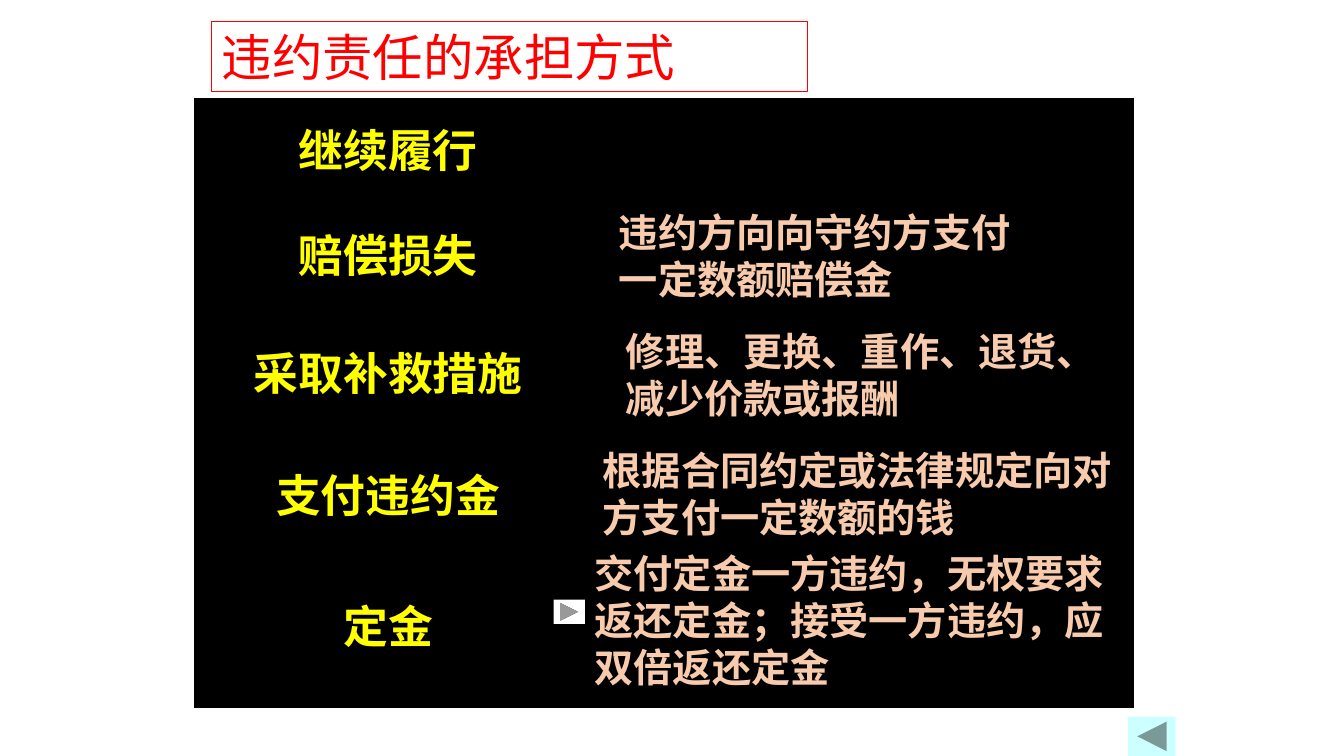
from lxml.etree import SubElement
from pptx import Presentation
from pptx.dml.color import RGBColor
from pptx.enum.shapes import MSO_SHAPE
from pptx.enum.text import MSO_ANCHOR, MSO_AUTO_SIZE, PP_ALIGN
from pptx.oxml import parse_xml
from pptx.oxml.ns import nsdecls, qn
from pptx.util import Inches, Pt


def color(code):
    return RGBColor.from_string(code)


def line_xml(tag, code, points):
    return parse_xml(
        f'<a:{tag} {nsdecls("a")} w="{int(Pt(points))}"><a:solidFill>'
        f'<a:srgbClr val="{code}"/></a:solidFill></a:{tag}>')


def write(frame, text, size, code, font, bold=False, align=None, before=20, outline=None):
    """Fill a text frame with one formatted paragraph; before is a percentage."""
    para = frame.paragraphs[0]
    para.alignment = align or PP_ALIGN.LEFT
    spacing = SubElement(para._p.get_or_add_pPr(), qn("a:spcBef"))
    SubElement(spacing, qn("a:spcPct")).set("val", str(before * 1000))
    span = para.add_run()
    span.text = text
    span.font.size = Pt(size)
    span.font.bold = bold
    span.font.name = font
    span.font.color.rgb = color(code)
    properties = span._r.get_or_add_rPr()
    SubElement(properties, qn("a:ea")).set("typeface", font)
    if outline:
        properties.insert(0, line_xml("ln", *outline))


class SlideBuilder:
    heading_font = "Noto Sans CJK SC"
    body_font = "Karla"
    red, yellow, peach, orange, black = "FF0000", "FFFF00", "F8CBAD", "ED7D31", "000000"

    def __init__(self, deck):
        self.page = deck.slides.add_slide(deck.slide_layouts[6])

    def shape(self, kind, left, top, width, height, fill=None, line=None):
        shape = self.page.shapes.add_shape(
            kind, Inches(left), Inches(top), Inches(width), Inches(height))
        shape.shadow.inherit = False
        if fill:
            shape.fill.solid()
            shape.fill.fore_color.rgb = color(fill)
        else:
            shape.fill.background()
        if line:
            shape.line.color.rgb = color(line)
            shape.line.width = Pt(0.75)
        else:
            shape.line.fill.background()
        return shape

    def title(self, text, *place):
        box = self.shape(MSO_SHAPE.RECTANGLE, *place, line=self.red)
        frame = box.text_frame
        frame.word_wrap = True
        frame.auto_size = MSO_AUTO_SIZE.SHAPE_TO_FIT_TEXT
        frame.vertical_anchor = MSO_ANCHOR.TOP
        write(frame, text, 36, self.red, self.heading_font, before=50)

    def note(self, text, left, top, width, height):
        box = self.page.shapes.add_textbox(
            Inches(left), Inches(top), Inches(width), Inches(height))
        frame = box.text_frame
        frame.word_wrap = True
        frame.auto_size = MSO_AUTO_SIZE.SHAPE_TO_FIT_TEXT
        write(frame, text, 28, self.peach, self.body_font, bold=True,
              outline=(self.orange, 1.75))

    def table(self, labels, left, top, widths, heights):
        table = self.page.shapes.add_table(
            len(heights), len(widths), Inches(left), Inches(top),
            Inches(sum(widths)), Inches(sum(heights))).table
        for column, width in zip(table.columns, widths):
            column.width = Inches(width)
        last_row, last_column = len(heights) - 1, len(widths) - 1
        for i, height in enumerate(heights):
            table.rows[i].height = Inches(height)
            for j in range(len(widths)):
                cell = table.cell(i, j)
                cell.vertical_anchor = MSO_ANCHOR.MIDDLE
                # Thick border on the outer edges, thin inside
                outer = {"lnL": j == 0, "lnR": j == last_column,
                         "lnT": i == 0, "lnB": i == last_row}
                for tag, thick in outer.items():
                    cell._tc.get_or_add_tcPr().append(
                        line_xml(tag, self.black, 2.25 if thick else 1))
                cell.fill.solid()
                cell.fill.fore_color.rgb = color(self.black)
            write(table.cell(i, 0).text_frame, labels[i], 32, self.yellow,
                  self.body_font, bold=True, align=PP_ALIGN.CENTER)


def main():
    deck = Presentation()
    deck.slide_width, deck.slide_height = Inches(13.33), Inches(7.5)
    builder = SlideBuilder(deck)

    # Remedies table
    builder.table(["继续履行", "赔偿损失", "采取补救措施", "支付违约金", "定金"],
                  1.94, 0.99, [3.82, 5.47], [1.05, 1.02, 1.34, 1.07, 1.54])

    # Navigation buttons
    builder.shape(MSO_SHAPE.ACTION_BUTTON_BACK_OR_PREVIOUS,
                  11.19, 7.11, 0.47, 0.39, fill="CCFFFF")
    builder.shape(MSO_SHAPE.ACTION_BUTTON_FORWARD_OR_NEXT,
                  5.49, 5.95, 0.31, 0.24, fill="FFFFFF")

    # Title
    builder.title("违约责任的承担方式", 2.1, 0.21, 5.91, 0.7)

    # Explanations beside the remedies
    notes = [
        ("违约方向向守约方支付一定数额赔偿金", 6.04, 2.02, 4.32, 1.03),
        ("修理、更换、重作、退货、减少价款或报酬", 6.11, 3.2, 4.49, 1.03),
        ("根据合同约定或法律规定向对方支付一定数额的钱", 5.88, 4.38, 5.45, 1.03),
        ("交付定金一方违约，无权要求返还定金；接受一方违约，应双倍返还定金", 5.8, 5.4, 5.58, 1.5),
    ]
    for note in notes:
        builder.note(*note)

    deck.save("out.pptx")


if __name__ == "__main__":
    main()
